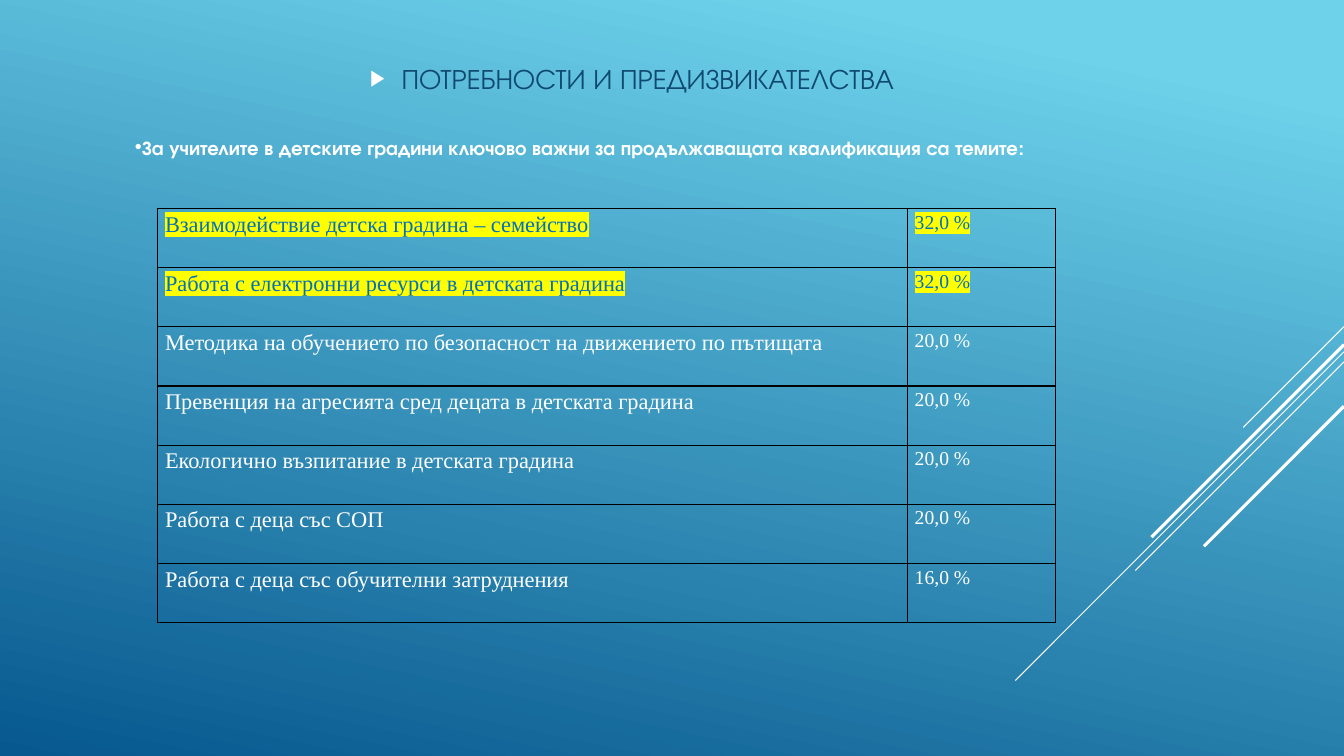
import dataclasses

import lxml.etree
import pptx
import pptx.dml.color
import pptx.enum.text
import pptx.oxml.ns
import pptx.util

Pt = pptx.util.Pt
qn = pptx.oxml.ns.qn
ALIGN = pptx.enum.text.PP_ALIGN
ANCHOR = pptx.enum.text.MSO_ANCHOR


@dataclasses.dataclass(frozen=True)
class Theme:
    sky: str = "6ED2EB"
    deep_blue: str = "06588E"
    heading: str = "0F496F"
    light: str = "FFFFFF"
    accent: str = "0070C0"
    marker: str = "FFFF00"
    border: str = "000000"
    display_font: str = "TeX Gyre Adventor"
    table_font: str = "Times New Roman"
    heading_size: int = 20
    topic_size: int = 16
    small_size: int = 14


THEME = Theme()
SLIDE_WIDTH, SLIDE_HEIGHT = 960, 540

HEADING = "ПОТРЕБНОСТИ И ПРЕДИЗВИКАТЕЛСТВА"
STATEMENT = ("За учителите в детските градини ключово важни за "
             "продължаващата квалификация са темите:")
TOPICS = [
    ("Взаимодействие детска градина – семейство", "32,0 %"),
    ("Работа с електронни ресурси в детската градина", "32,0 %"),
    ("Методика на обучението по безопасност на движението по пътищата", "20,0 %"),
    ("Превенция на агресията сред децата в детската градина", "20,0 %"),
    ("Екологично възпитание в детската градина", "20,0 %"),
    ("Работа с деца със СОП", "20,0 %"),
    ("Работа с деца със обучителни затруднения", "16,0 %"),
]
HIGHLIGHTED_ROWS = 2
COLUMN_WIDTHS = (535.5, 106)
ROW_HEIGHT = 42.25

# Height at the right edge, horizontal run, line width
DIAGONALS = [
    (233.3, 72, 0.75),
    (251.3, 234.7, 0.75),
    (258.5, 149, 0.75),
    (246.2, 137.5, 2.25),
    (290.2, 100, 2.25),
]


def rgb(color):
    return pptx.dml.color.RGBColor.from_string(color)


def add_child(parent, tag, **attributes):
    return lxml.etree.SubElement(parent, qn(tag), attributes)


def paint_background(slide):
    fill = slide.background.fill
    fill.gradient()
    fill.gradient_angle = 360 - 102
    stops = ((0.1, THEME.sky), (1, THEME.deep_blue))
    for stop, (position, color) in zip(fill.gradient_stops, stops):
        stop.position = position
        stop.color.rgb = rgb(color)


def add_diagonal(slide, edge_y, run, width):
    """Draw a 45-degree line falling leftwards from the right edge."""
    line = slide.shapes.add_connector(
        pptx.enum.shapes.MSO_CONNECTOR.STRAIGHT,
        Pt(SLIDE_WIDTH), Pt(edge_y), Pt(SLIDE_WIDTH - run), Pt(edge_y + run))
    line.line.color.rgb = rgb(THEME.light)
    line.line.width = Pt(width)
    add_child(line._element.spPr, "a:effectLst")


def add_run(paragraph, text, font_name, size, color, bold=False):
    run = paragraph.add_run()
    run.text = text
    run.font.size = Pt(size)
    run.font.bold = bold
    run.font.color.rgb = rgb(color)
    run.font.name = font_name
    return run


def highlight(run, color):
    properties = run.font._element
    marker = lxml.etree.Element(qn("a:highlight"))
    add_child(marker, "a:srgbClr", val=color)
    properties.find(qn("a:solidFill")).addnext(marker)


def set_bullet(paragraph, character, percent, margin, indent):
    properties = paragraph._p.get_or_add_pPr()
    properties.set("marL", str(Pt(margin)))
    properties.set("indent", str(Pt(indent)))
    add_child(add_child(properties, "a:buClr"), "a:srgbClr", val=THEME.light)
    add_child(properties, "a:buSzPct", val=str(percent * 1000))
    add_child(properties, "a:buFont", typeface="Arial")
    add_child(properties, "a:buChar", char=character)


def place(placeholder, left, top, width, height):
    """Position a placeholder and return its first paragraph."""
    placeholder.left, placeholder.top = Pt(left), Pt(top)
    placeholder.width, placeholder.height = Pt(width), Pt(height)
    placeholder.text_frame.vertical_anchor = ANCHOR.MIDDLE
    return placeholder.text_frame.paragraphs[0]


def fill_heading(placeholder):
    paragraph = place(placeholder, 98, 26.6, 707, 58.3)
    paragraph.alignment = ALIGN.CENTER
    paragraph.space_before = Pt(4)
    paragraph.space_after = Pt(6)
    set_bullet(paragraph, "▶", 80, 22.5, -22.5)
    add_run(paragraph, HEADING, THEME.display_font, THEME.heading_size, THEME.heading)


def fill_statement(placeholder):
    paragraph = place(placeholder, 61.2, 92.9, 743.8, 24.5)
    placeholder.text_frame.word_wrap = False
    placeholder.text_frame.auto_size = pptx.enum.text.MSO_AUTO_SIZE.SHAPE_TO_FIT_TEXT
    paragraph.alignment = ALIGN.JUSTIFY
    set_bullet(paragraph, "•", 100, 0, 28)
    add_run(paragraph, STATEMENT, THEME.display_font, THEME.small_size,
            THEME.light, bold=True)


def set_borders(cell):
    properties = cell._tc.get_or_add_tcPr()
    for index, side in enumerate(("a:lnL", "a:lnR", "a:lnT", "a:lnB")):
        border = lxml.etree.Element(qn(side), w=str(Pt(1)))
        add_child(add_child(border, "a:solidFill"), "a:srgbClr", val=THEME.border)
        properties.insert(index, border)


def fill_cell(cell, text, size, is_highlighted):
    cell.fill.background()
    set_borders(cell)
    cell.margin_left = cell.margin_right = Pt(5.4)
    cell.margin_top = cell.margin_bottom = 0
    paragraph = cell.text_frame.paragraphs[0]
    paragraph.alignment = ALIGN.JUSTIFY
    paragraph.line_spacing = 1.15
    paragraph.space_before = paragraph.space_after = Pt(6)
    color = THEME.accent if is_highlighted else THEME.light
    run = add_run(paragraph, text, THEME.table_font, size, color)
    if is_highlighted:
        highlight(run, THEME.marker)


def add_topic_table(slide):
    table = slide.shapes.add_table(
        len(TOPICS), len(COLUMN_WIDTHS), Pt(112.5), Pt(149),
        Pt(sum(COLUMN_WIDTHS)), Pt(ROW_HEIGHT * len(TOPICS))).table
    table.first_row = table.horz_banding = False
    for column, width in zip(table.columns, COLUMN_WIDTHS):
        column.width = Pt(width)
    for row_index, (row, texts) in enumerate(zip(table.rows, TOPICS)):
        row.height = Pt(ROW_HEIGHT)
        sizes = (THEME.topic_size, THEME.small_size)
        for cell, text, size in zip(row.cells, texts, sizes):
            fill_cell(cell, text, size, row_index < HIGHLIGHTED_ROWS)


def main():
    presentation = pptx.Presentation()
    presentation.slide_width = Pt(SLIDE_WIDTH)
    presentation.slide_height = Pt(SLIDE_HEIGHT)
    slide = presentation.slides.add_slide(presentation.slide_layouts[1])
    paint_background(slide)
    for diagonal in DIAGONALS:
        add_diagonal(slide, *diagonal)
    fill_heading(slide.placeholders[1])
    add_topic_table(slide)
    fill_statement(slide.shapes.title)
    presentation.save("out.pptx")


if __name__ == "__main__":
    main()
